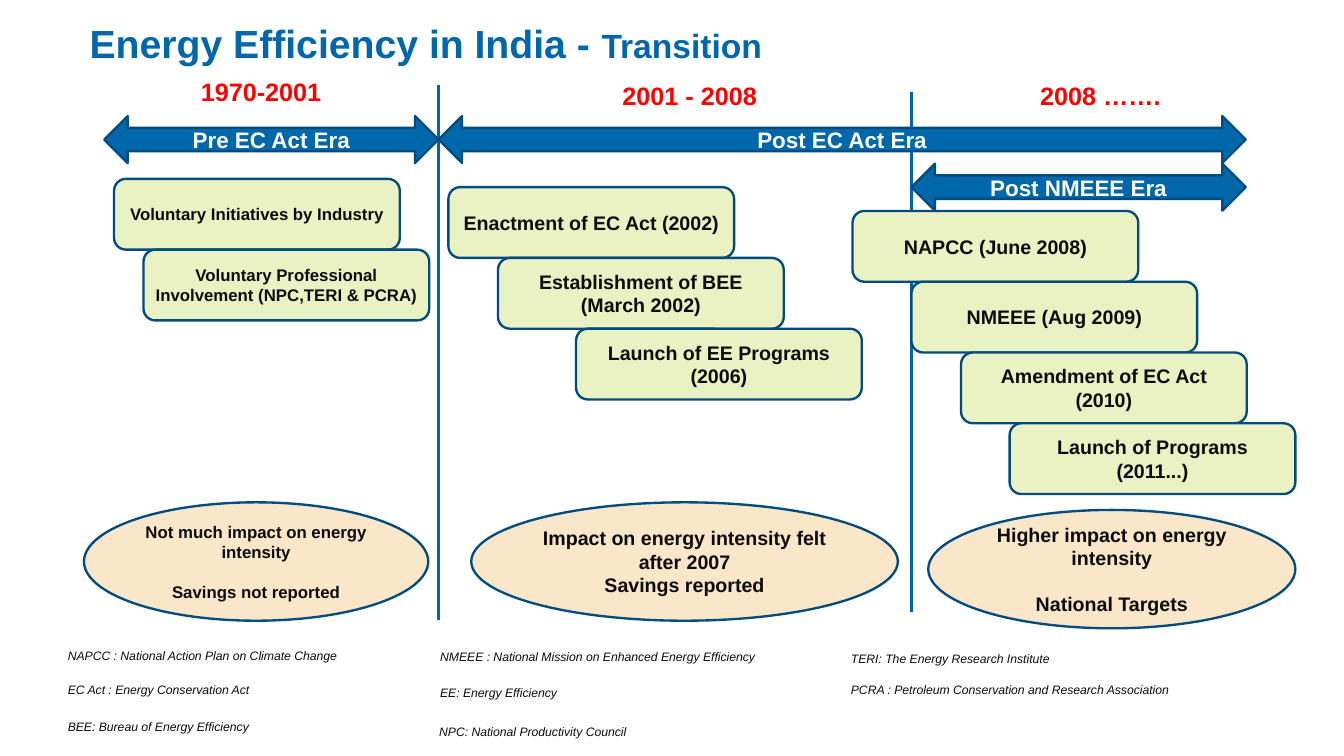
from lxml.etree import SubElement
from pptx import Presentation
from pptx.dml.color import RGBColor
from pptx.enum.shapes import MSO_CONNECTOR, MSO_SHAPE
from pptx.enum.text import MSO_ANCHOR, MSO_AUTO_SIZE, PP_ALIGN
from pptx.oxml.ns import qn
from pptx.util import Cm, Pt

BLUE, NAVY, DIVIDER_BLUE = "0067AB", "004C7F", "0065AB"
GREEN, PEACH = "EAF2C3", "FAE6C9"
INK, RED, WHITE = "0C0C0C", "FF0000", "FFFFFF"

STEP_WIDTH, STEP_HEIGHT = 8.64, 2.14
ARROW_HEIGHT, OUTCOME_HEIGHT = 1.42, 3.58

DIVIDERS = [(27.56, 2.79, 18.52), (13.26, 2.57, 18.75)]
PERIODS = [
    ("1970-2001", 2.69, 2.18),
    ("2001 - 2008", 15.65, 2.31),
    ("2008 …….", 28.07, 2.31),
]
ERAS = [
    ("Pre EC Act Era", 3.15, 3.51, 10.11),
    ("Post EC Act Era", 13.26, 3.51, 24.41),
    ("Post NMEEE Era", 27.56, 4.95, 10.11),
]
STAIRCASES = [
    (5.66, 16.8, [
        (13.56, "Enactment of EC Act (2002)"),
        (15.06, "Establishment of BEE (March 2002)"),
        (17.42, "Launch of EE Programs (2006)"),
    ]),
    (6.38, 16.8, [
        (25.78, "NAPCC (June 2008)"),
        (27.56, "NMEEE (Aug 2009)"),
        (29.06, "Amendment of EC Act (2010)"),
        (30.53, "Launch of Programs (2011...)"),
    ]),
    (5.41, 14.4, [
        (3.45, "Voluntary Initiatives by Industry"),
        (4.34, "Voluntary Professional Involvement (NPC,TERI & PCRA)"),
    ]),
]
OUTCOMES = [
    (2.54, 15.19, 10.41, 14.4, 16.5,
     ["Not much impact on energy intensity", "Savings not reported"]),
    (14.25, 15.19, 12.9, 16.8, 0,
     ["Impact on energy intensity felt after 2007", "Savings reported"]),
    (28.07, 15.42, 11.1, 16.8, 19.3,
     ["Higher impact on energy intensity", "National Targets"]),
]
ABBREVIATIONS = [
    (1.8, 19.48, "NAPCC : National Action Plan on Climate Change"),
    (1.8, 20.5, "EC Act : Energy Conservation Act"),
    (1.8, 21.62, "BEE: Bureau of Energy Efficiency"),
    (13.06, 19.51, "NMEEE : National Mission on Enhanced Energy Efficiency"),
    (13.06, 20.6, "EE: Energy Efficiency"),
    (13.03, 21.77, "NPC: National Productivity Council"),
    (25.48, 19.58, "TERI: The Energy Research Institute"),
    (25.48, 20.52, "PCRA : Petroleum Conservation and Research Association"),
]


def rgb(hex_code):
    """Turn a hex string into a colour."""
    return RGBColor.from_string(hex_code)


def apply(target, values):
    """Set each attribute named in a dict of format values."""
    for name, value in values.items():
        setattr(target, name, value)


def style_font(font, size, color, **extras):
    """Format a font in Arial."""
    apply(font, {"name": "Arial", "size": Pt(size), **extras})
    font.color.rgb = rgb(color)


def write(frame, lines, size, color, align, gap=0, **extras):
    """Fill a text frame with one paragraph per line."""
    frame.word_wrap = True
    for index, line in enumerate(lines):
        paragraph = frame.add_paragraph() if index else frame.paragraphs[0]
        paragraph.alignment = align
        if index and gap:
            paragraph.space_before = Pt(gap)
        run = paragraph.add_run()
        run.text = line
        style_font(run.font, size, color, **extras)


def add_panel(slide, kind, box, fill, lines, size, color, gap=0):
    """Add an outlined shape with bold centred text."""
    panel = slide.shapes.add_shape(kind, *map(Cm, box))
    panel.shadow.inherit = False
    panel.fill.solid()
    panel.fill.fore_color.rgb = rgb(fill)
    panel.line.color.rgb = rgb(NAVY)
    panel.line.width = Pt(2)
    panel.text_frame.vertical_anchor = MSO_ANCHOR.MIDDLE
    write(panel.text_frame, lines, size, color, PP_ALIGN.CENTER, gap, bold=True)


def add_label(slide, box, text, size, color, align, **extras):
    """Add a one-line text box."""
    label = slide.shapes.add_textbox(*map(Cm, box))
    write(label.text_frame, [text], size, color, align, **extras)


def add_divider(slide, x, top, bottom):
    """Add a vertical line between two eras."""
    divider = slide.shapes.add_connector(
        MSO_CONNECTOR.STRAIGHT, Cm(x), Cm(top), Cm(x), Cm(bottom))
    divider.line.color.rgb = rgb(DIVIDER_BLUE)
    divider.line.width = Pt(3.25)
    SubElement(divider._element.spPr, qn("a:effectLst"))


def format_title(title):
    """Place the title and write its two sizes of text."""
    apply(title, {"left": Cm(1.8), "top": Cm(0.51),
                  "width": Cm(26.72), "height": Cm(1.68)})
    apply(title.text_frame, {
        "margin_left": Cm(0.91), "margin_right": Cm(0.3),
        "margin_top": Cm(0.15), "margin_bottom": Cm(0.15),
        "word_wrap": True, "auto_size": MSO_AUTO_SIZE.NONE,
        "vertical_anchor": MSO_ANCHOR.MIDDLE})
    heading = title.text_frame.paragraphs[0]
    apply(heading, {"alignment": PP_ALIGN.LEFT, "line_spacing": 0.95})
    for text, size in [("Energy Efficiency in India - ", 33.6),
                       ("Transition", 28.8)]:
        run = heading.add_run()
        run.text = text
        style_font(run.font, size, BLUE, bold=True)


def main():
    """Build the slide and save it."""
    deck = Presentation()
    apply(deck, {"slide_width": Cm(40.64), "slide_height": Cm(22.86)})
    slide = deck.slides.add_slide(deck.slide_layouts[5])
    format_title(slide.shapes.title)
    for x, top, bottom in DIVIDERS:
        add_divider(slide, x, top, bottom)
    for era, left, top, width in ERAS:
        add_panel(slide, MSO_SHAPE.LEFT_RIGHT_ARROW,
                  (left, top, width, ARROW_HEIGHT), BLUE, [era], 19.2, WHITE)
    for first_top, size, steps in STAIRCASES:
        for index, (left, step) in enumerate(steps):
            top = first_top + index * STEP_HEIGHT
            add_panel(slide, MSO_SHAPE.ROUNDED_RECTANGLE,
                      (left, top, STEP_WIDTH, STEP_HEIGHT),
                      GREEN, [step], size, INK)
    for left, top, width, size, gap, lines in OUTCOMES:
        add_panel(slide, MSO_SHAPE.OVAL, (left, top, width, OUTCOME_HEIGHT),
                  PEACH, lines, size, INK, gap)
    for period, left, top in PERIODS:
        add_label(slide, (left, top, 10.41, 1.17), period, 21.6, RED,
                  PP_ALIGN.CENTER, bold=True)
    for left, top, meaning in ABBREVIATIONS:
        add_label(slide, (left, top, 10.8, 0.71), meaning, 10.5, INK,
                  PP_ALIGN.LEFT, italic=True)
    deck.save("out.pptx")


if __name__ == "__main__":
    main()
